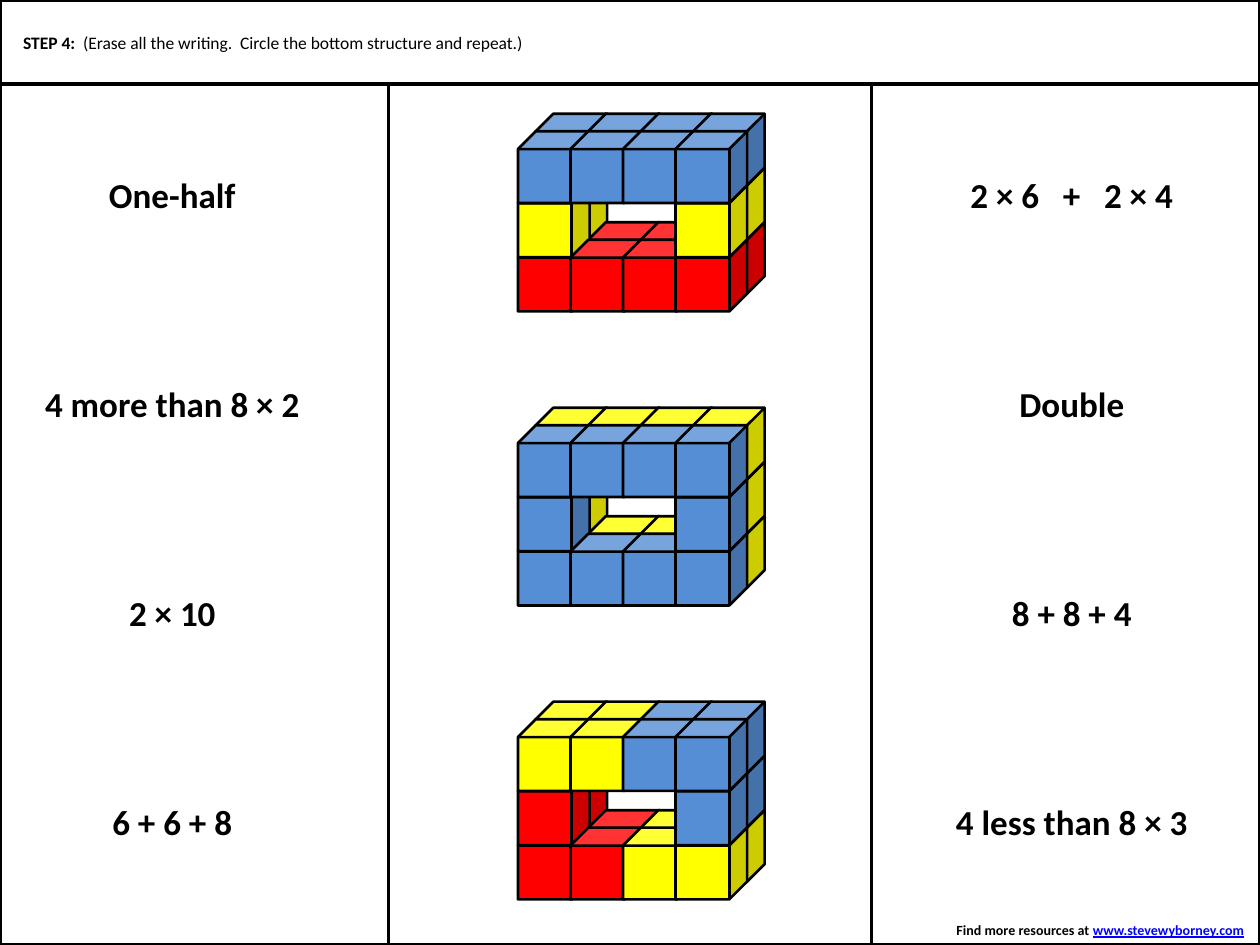
from dataclasses import dataclass

from pptx import Presentation
from pptx.dml.color import RGBColor
from pptx.enum.shapes import MSO_SHAPE as Shape
from pptx.enum.text import MSO_ANCHOR as Anchor, MSO_AUTO_SIZE as AutoSize, PP_ALIGN as Align
from pptx.util import Pt


@dataclass(frozen=True)
class Theme:
    font: str = "Calibri"
    black: str = "000000"
    white: str = "FFFFFF"
    link: str = "0000FF"
    red: str = "FF0000"
    yellow: str = "FFFF00"
    blue: str = "558ED5"
    footer_size: float = 8
    step_size: float = 10
    phrase_size: float = 20
    panel_line: float = 2
    cube_line: float = 1.5


THEME = Theme()
CUBE_COLORS = {"R": THEME.red, "Y": THEME.yellow, "B": THEME.blue}

WIDTH, HEIGHT = 720, 540
HEADER_HEIGHT = 48
SIDE_WIDTH = 222
LEFT_PANEL = (0, 0, SIDE_WIDTH, HEIGHT)
MIDDLE_PANEL = (SIDE_WIDTH, 0, WIDTH - 2 * SIDE_WIDTH, HEIGHT)
RIGHT_PANEL = (WIDTH - SIDE_WIDTH, 0, SIDE_WIDTH, HEIGHT)
HEADER = (0, 0, WIDTH, HEADER_HEIGHT)

# Each phrase with the width of its box
LEFT_PHRASES = [("One-half", 88), ("4 more than 8 × 2", 161), ("2 × 10", 64), ("6 + 6 + 8", 83.5)]
RIGHT_PHRASES = [("2 × 6   +   2 × 4", 131), ("Double", 75), ("8 + 8 + 4", 83.5),
                 ("4 less than 8 × 3", 147.5)]

# Each structure as (back layer, front layer), rows from top to bottom
STRUCTURES = [
    (("BBBB", "Y  Y", "RRRR"), ("BBBB", "Y  Y", "RRRR")),
    (("YYYY", "Y  Y", "YYYY"), ("BBBB", "B  B", "BBBB")),
    (("YYBB", "R  B", "RRYY"), ("YYBB", "R  B", "RRYY")),
]
CUBE_SIZE, CUBE_STEP_X, CUBE_STEP_Y, CUBE_DEPTH = 41, 30, 31, 10


def rgb(color):
    return RGBColor.from_string(color)


def points(box):
    return [Pt(length) for length in box]


def write_text(shape, spans, size, align=Align.LEFT, anchor=Anchor.TOP, wrap=False,
               auto_size=AutoSize.SHAPE_TO_FIT_TEXT):
    """Write spans of (text, format) as one paragraph."""
    frame = shape.text_frame
    frame.word_wrap, frame.auto_size, frame.vertical_anchor = wrap, auto_size, anchor
    para = frame.paragraphs[0]
    para.alignment = align
    for text, style in spans:
        span = para.add_run()
        span.text = text
        span.font.name, span.font.size = THEME.font, Pt(size)
        span.font.bold = style.get("bold", True)
        span.font.underline = style.get("underline", False)
        span.font.color.rgb = rgb(style.get("color", THEME.black))


def add_outlined(group, kind, box, line_width, fill=None):
    shape = group.shapes.add_shape(kind, *points(box))
    shape.shadow.inherit = False
    if fill:
        shape.fill.solid()
        shape.fill.fore_color.rgb = rgb(fill)
    else:
        shape.fill.background()
    shape.line.color.rgb = rgb(THEME.black)
    shape.line.width = Pt(line_width)


def add_panels(page):
    group = page.shapes.add_group_shape()
    for box in (MIDDLE_PANEL, LEFT_PANEL, RIGHT_PANEL):
        add_outlined(group, Shape.RECTANGLE, box, THEME.panel_line)
    add_outlined(group, Shape.RECTANGLE, HEADER, THEME.panel_line, THEME.white)


def add_step(page, box):
    left, top, width, height = box
    margin = 6
    title = page.shapes.title
    page.shapes.element.append(title.element)  # bring in front of the header
    title.left, title.top, title.width, title.height = points(
        (left + margin, top + margin, width - 2 * margin, height - 2 * margin))
    title.fill.solid()
    title.fill.fore_color.rgb = rgb(THEME.white)
    write_text(title, [
        ("STEP 4:  ", {}),
        ("(Erase all the writing.  Circle the bottom structure and repeat.)", {"bold": False}),
    ], THEME.step_size, anchor=Anchor.MIDDLE, wrap=True, auto_size=AutoSize.NONE)


def add_footer(page, box):
    left, top, width, height = box
    note_width, note_height = 183, 17
    note = page.shapes.add_textbox(*points(
        (left + width - note_width, top + height - note_height, note_width, note_height)))
    write_text(note, [
        ("Find more resources at ", {}),
        ("www.stevewyborney.com", {"color": THEME.link, "underline": True}),
        (" ", {}),
    ], THEME.footer_size, align=Align.RIGHT)


def add_structure(page, left, top, layers):
    """Stack cubes from back to front, each column from the bottom up."""
    group = page.shapes.add_group_shape()
    for depth, rows in enumerate(layers):
        for column in range(len(rows[0])):
            for row in reversed(range(len(rows))):
                color = CUBE_COLORS.get(rows[row][column])
                if color:
                    x = left - depth * CUBE_DEPTH + column * CUBE_STEP_X
                    y = top + depth * CUBE_DEPTH + row * CUBE_STEP_Y
                    add_outlined(group, Shape.CUBE, (x, y, CUBE_SIZE, CUBE_SIZE),
                                 THEME.cube_line, color)


def add_structures(page, box):
    left, top = box[:2]
    for index, layers in enumerate(STRUCTURES):
        add_structure(page, left + 84, top + 65 + index * 168, layers)


def add_phrases(page, box, phrases, shift):
    """Space phrases down a panel, centred at a small shift from its middle."""
    left, top, width, _ = box
    center = left + width / 2 + shift
    for index, (phrase, phrase_width) in enumerate(phrases):
        label = page.shapes.add_textbox(*points(
            (center - phrase_width / 2, top + 95.6 + index * 119.5, phrase_width, 31.5)))
        write_text(label, [(phrase, {})], THEME.phrase_size, align=Align.CENTER)


def main():
    deck = Presentation()
    deck.slide_width, deck.slide_height = Pt(WIDTH), Pt(HEIGHT)
    page = deck.slides.add_slide(deck.slide_layouts[5])  # Title Only
    add_panels(page)
    add_footer(page, RIGHT_PANEL)
    add_step(page, HEADER)
    add_structures(page, MIDDLE_PANEL)
    add_phrases(page, LEFT_PANEL, LEFT_PHRASES, shift=-12.5)
    add_phrases(page, RIGHT_PANEL, RIGHT_PHRASES, shift=3.5)
    deck.save("out.pptx")


if __name__ == "__main__":
    main()
